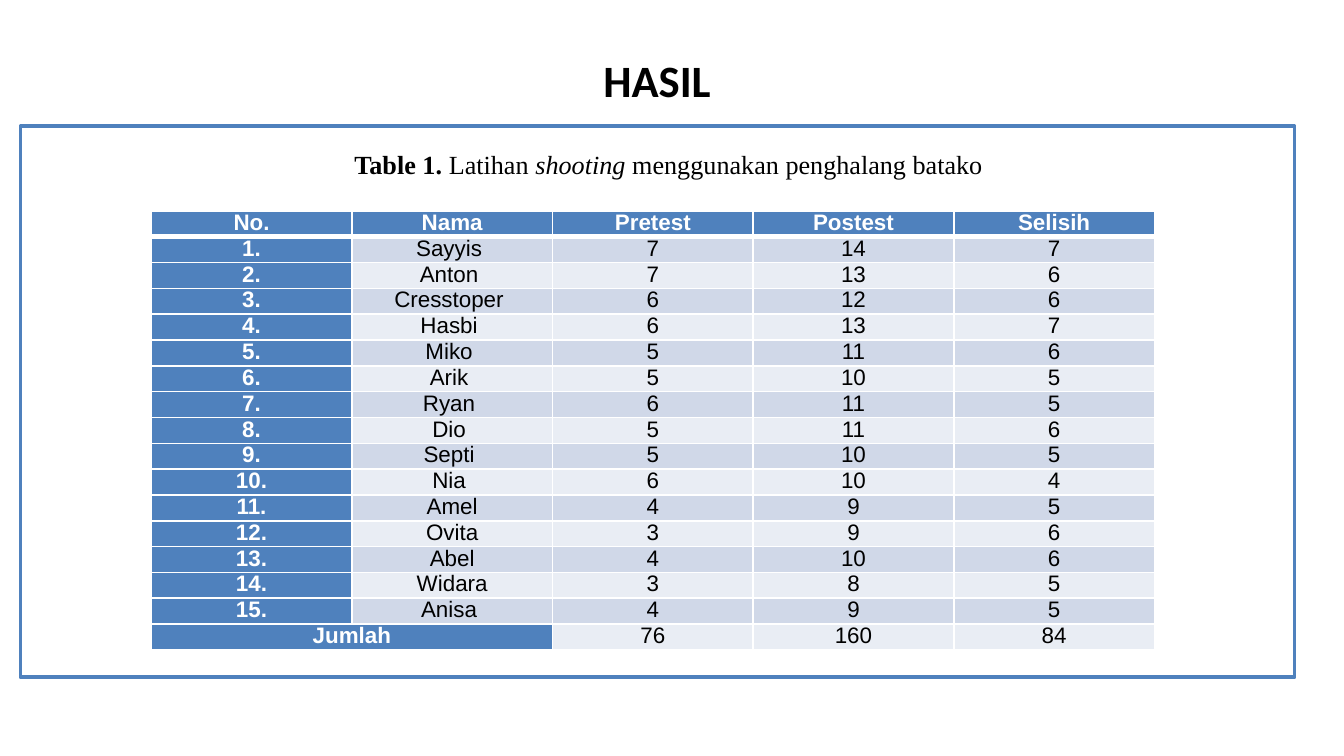
from lxml import etree
from pptx import Presentation
from pptx import util as u
from pptx.dml import color
from pptx.enum import shapes, text
from pptx.oxml import ns

TITLE = "HASIL"
CAPTION = [("Table 1.", True, False), (" Latihan ", False, False), ("shooting ", False, True),
           ("menggunakan penghalang batako", False, False)]
HEADER = ["No.", "Nama", "Pretest", "Postest", "Selisih"]
SCORES = [
    ("Sayyis ", 7, 14, 7), ("Anton ", 7, 13, 6), ("Cresstoper ", 6, 12, 6),
    ("Hasbi ", 6, 13, 7), ("Miko ", 5, 11, 6), ("Arik ", 5, 10, 5),
    ("Ryan ", 6, 11, 5), ("Dio ", 5, 11, 6), ("Septi ", 5, 10, 5),
    ("Nia ", 6, 10, 4), ("Amel", 4, 9, 5), ("Ovita", 3, 9, 6),
    ("Abel", 4, 10, 6), ("Widara", 3, 8, 5), ("Anisa ", 4, 9, 5),
]
TOTAL = ["Jumlah", "", 76, 160, 84]
BLUE, WHITE, BLACK = "4F81BD", "FFFFFF", "000000"
BANDS = ["E9EDF4", "D0D8E8"]
COLUMN_WIDTH, ROW_HEIGHT = 107.5, 13.85


def rgb(value):
    """Return the colour for a hex string."""
    return color.RGBColor.from_string(value)


def box(left, top, width, height):
    """Return a position and size given in points."""
    return [u.Pt(value) for value in (left, top, width, height)]


def style(run, name, size, colour, bold=False, italic=False):
    """Format one run."""
    font = run.font
    font.name, font.size, font.bold, font.italic = name, u.Pt(size), bold, italic
    font.color.rgb = rgb(colour)


def add_title(slide):
    """Place the slide title."""
    title = slide.shapes.title
    title.left, title.top, title.width, title.height = box(211, 25.2, 282, 34.5)
    frame = title.text_frame
    frame.text = TITLE
    frame.auto_size = text.MSO_AUTO_SIZE.NONE
    frame.vertical_anchor = text.MSO_ANCHOR.MIDDLE
    frame.paragraphs[0].alignment = text.PP_ALIGN.CENTER
    style(frame.paragraphs[0].runs[0], "Calibri", 24, BLACK, bold=True)


def add_panel(slide):
    """Draw the outlined panel."""
    panel = slide.shapes.add_shape(shapes.MSO_SHAPE.RECTANGLE, *box(11, 67.7, 682.5, 295.2))
    panel.shadow.inherit = False
    panel.fill.solid()
    panel.fill.fore_color.rgb = rgb(WHITE)
    panel.line.color.rgb = rgb(BLUE)
    panel.line.width = u.Pt(2)


def add_caption(slide):
    """Write the table caption."""
    frame = slide.shapes.add_textbox(*box(134, 79.9, 448.5, 20.2)).text_frame
    frame.word_wrap = True
    frame.auto_size = text.MSO_AUTO_SIZE.SHAPE_TO_FIT_TEXT
    paragraph = frame.paragraphs[0]
    paragraph.alignment = text.PP_ALIGN.CENTER
    paragraph.line_spacing = u.Pt(13)
    for words, bold, italic in CAPTION:
        run = paragraph.add_run()
        run.text = words
        style(run, "Times New Roman", 14, BLACK, bold, italic)


def add_borders(cell, widths):
    """Draw white borders in the given widths."""
    properties = cell._tc.get_or_add_tcPr()
    for side, width in zip("LRTB", widths):
        line = etree.SubElement(properties, ns.qn(f"a:ln{side}"), w=str(u.Pt(width)))
        fill = etree.SubElement(line, ns.qn("a:solidFill"))
        etree.SubElement(fill, ns.qn("a:srgbClr"), val=WHITE)


def fill_cell(cell, value, fill, widths, heading):
    """Write and format one table cell."""
    cell.margin_left = cell.margin_right = u.Pt(5)
    cell.margin_top = cell.margin_bottom = 0
    add_borders(cell, widths)
    cell.fill.solid()
    cell.fill.fore_color.rgb = rgb(fill)
    paragraph = cell.text_frame.paragraphs[0]
    paragraph.text = str(value)
    paragraph.alignment = text.PP_ALIGN.CENTER
    paragraph.line_spacing = u.Pt(13)
    for run in paragraph.runs:
        style(run, "Arial", 12, WHITE if heading else BLACK, bold=heading)


def add_scores(slide):
    """Build the table of scores."""
    numbered = [[f"{number}.", *score] for number, score in enumerate(SCORES, 1)]
    rows = [HEADER, *numbered, TOTAL]
    size = COLUMN_WIDTH * len(HEADER), ROW_HEIGHT * len(rows)
    table = slide.shapes.add_table(len(rows), len(HEADER), *box(81, 113, *size)).table
    for column in table.columns:
        column.width = u.Pt(COLUMN_WIDTH)
    for row in table.rows:
        row.height = u.Pt(ROW_HEIGHT)
    for i, row in enumerate(rows):
        widths = (1, 1, 3 if i == 1 else 1, 3 if i == 0 else 1)
        for j, value in enumerate(row):
            heading = i == 0 or j == 0
            fill_cell(table.cell(i, j), value, BLUE if heading else BANDS[i % 2], widths, heading)
    last = len(rows) - 1
    table.cell(last, 0).merge(table.cell(last, 1))


def main():
    """Build and save the slide."""
    presentation = Presentation()
    presentation.slide_width, presentation.slide_height = u.Pt(720), u.Pt(405)
    slide = presentation.slides.add_slide(presentation.slide_layouts[5])
    add_title(slide)
    add_panel(slide)
    add_caption(slide)
    add_scores(slide)
    presentation.save("out.pptx")


if __name__ == "__main__":
    main()
